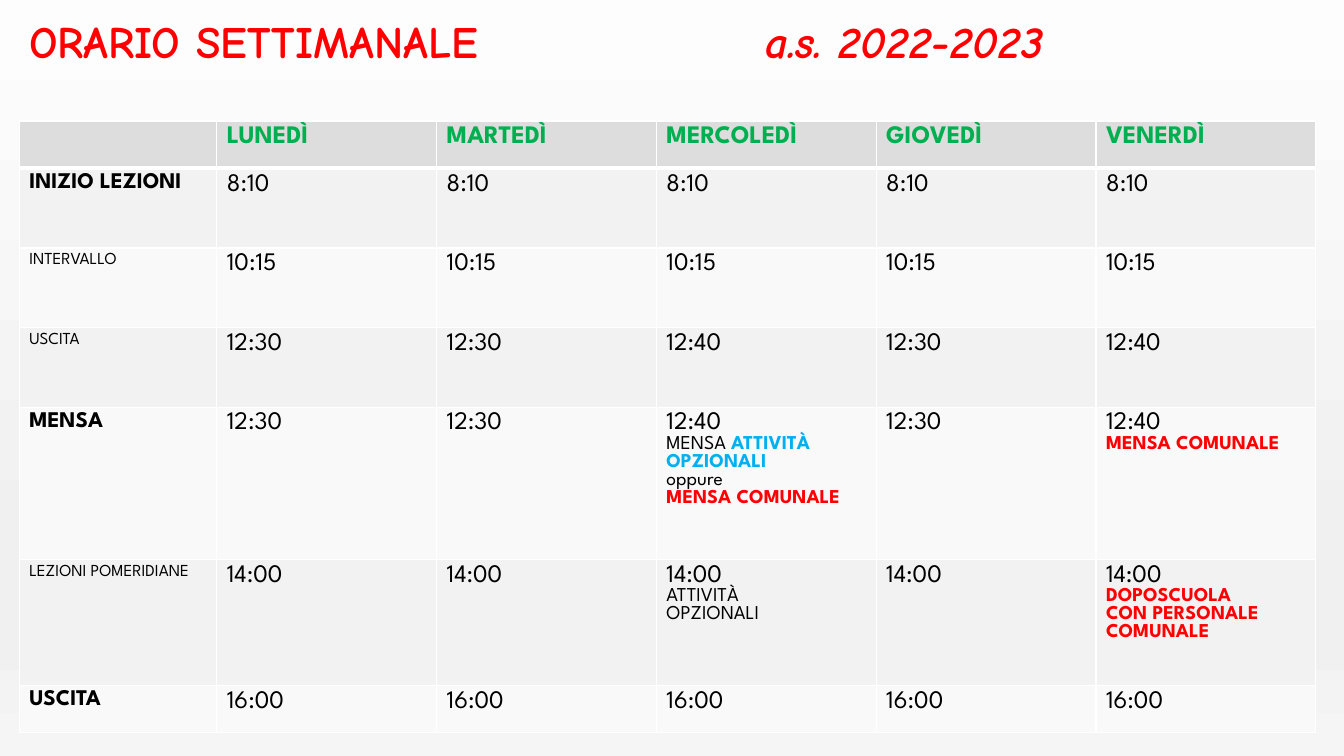
import pptx
import pptx.util
import pptx.dml.color
import pptx.enum.text
import pptx.oxml.ns
from lxml import etree
from pptx.util import Inches

RED, GREEN, BLUE, BLACK, WHITE = "FF0000", "00B050", "00B0F0", "000000", "FFFFFF"
HEADER_FILL, BAND_FILLS = "DDDDDD", ("F9F9F9", "F2F2F2")
BACKGROUND_STOPS = [(0, "FDFDFD"), (74, "F0F0F0"), (83, "F0F0F0"), (100, "F5F5F5")]

DAYS = ["LUNEDÌ", "MARTEDÌ", "MERCOLEDÌ", "GIOVEDÌ", "VENERDÌ"]
COLUMN_WIDTHS = [1.96] + [2.18] * len(DAYS)
HEADER_HEIGHT = 0.47
MAIN, MINOR = {"size": 16, "bold": True}, {"size": 12}
SCHEDULE = [
    ("INIZIO LEZIONI", MAIN, 0.79, ["8:10"] * 5),
    ("INTERVALLO", MINOR, 0.79, ["10:15"] * 5),
    ("USCITA", MINOR, 0.79, ["12:30", "12:30", "12:40", "12:30", "12:40"]),
    ("MENSA", MAIN, 1.51, ["12:30", "12:30", "12:40", "12:30", "12:40"]),
    ("LEZIONI POMERIDIANE", MINOR, 1.25, ["14:00"] * 5),
    ("USCITA", MAIN, 0.47, ["16:00"] * 5),
]
PLAIN_NOTE = {"size": 14}
RED_NOTE = {"size": 14, "color": RED, "bold": True}
BLUE_NOTE = {"size": 14, "color": BLUE, "bold": True}
NOTES = {
    ("MENSA", "MERCOLEDÌ"): [
        [("MENSA ", PLAIN_NOTE), ("ATTIVITÀ OPZIONALI", BLUE_NOTE)],
        [("oppure", PLAIN_NOTE)],
        [("MENSA COMUNALE", RED_NOTE)],
    ],
    ("MENSA", "VENERDÌ"): [[("MENSA COMUNALE", RED_NOTE)]],
    ("LEZIONI POMERIDIANE", "MERCOLEDÌ"): [
        [("ATTIVITÀ", PLAIN_NOTE)],
        [("OPZIONALI", PLAIN_NOTE)],
    ],
    ("LEZIONI POMERIDIANE", "VENERDÌ"): [
        [("DOPOSCUOLA", RED_NOTE)],
        [("CON PERSONALE COMUNALE", RED_NOTE)],
    ],
}


def rgb(color):
    """Turn a hex string into a colour."""
    return pptx.dml.color.RGBColor.from_string(color)


def add_xml(parent, tag, **attributes):
    """Append a DrawingML element to its parent."""
    return etree.SubElement(parent, pptx.oxml.ns.qn(tag), **attributes)


def write(paragraph, text, size=18, color=BLACK, bold=False, italic=False,
          font="League Spartan"):
    """Add a formatted run to a paragraph."""
    run = paragraph.add_run()
    run.text = text
    run.font.name = font
    run.font.size = pptx.util.Pt(size)
    run.font.bold = bold
    run.font.italic = italic
    run.font.color.rgb = rgb(color)


def paint_background(slide):
    """Give the slide its vertical grey gradient."""
    fill = slide.background.fill
    fill.gradient()
    fill.gradient_angle = 270
    stops = slide.element.find(".//" + pptx.oxml.ns.qn("a:gsLst"))
    for stop in list(stops):
        stops.remove(stop)
    for percent, color in BACKGROUND_STOPS:
        stop = add_xml(stops, "a:gs", pos=str(percent * 1000))
        add_xml(stop, "a:srgbClr", val=color)


def add_title(slide):
    """Fill the title, with the school year set at a tab stop."""
    title = slide.shapes.title
    title.left, title.top = Inches(0.19), Inches(0.09)
    title.width, title.height = Inches(12.68), Inches(0.64)
    frame = title.text_frame
    frame.word_wrap = True
    frame.auto_size = pptx.enum.text.MSO_AUTO_SIZE.NONE
    frame.vertical_anchor = pptx.enum.text.MSO_ANCHOR.TOP
    heading = frame.paragraphs[0]
    heading.alignment = pptx.enum.text.PP_ALIGN.LEFT
    tabs = add_xml(heading._p.get_or_add_pPr(), "a:tabLst")
    add_xml(tabs, "a:tab", pos=str(Inches(7.3)), algn="l")
    style = {"size": 32, "color": RED, "bold": True, "font": "Comic Neue"}
    write(heading, "ORARIO SETTIMANALE\t", **style)
    write(heading, "a.s. 2022-2023", italic=True, **style)


def format_cell(cell, fill, top=1, bottom=1):
    """Set the white borders and the fill of a cell."""
    properties = cell._tc.get_or_add_tcPr()
    for side, width in (("L", 1), ("R", 1), ("T", top), ("B", bottom)):
        line = add_xml(properties, "a:ln" + side, w=str(pptx.util.Pt(width)))
        add_xml(add_xml(line, "a:solidFill"), "a:srgbClr", val=WHITE)
    cell.fill.solid()
    cell.fill.fore_color.rgb = rgb(fill)


def fill_time(cell, time, notes):
    """Write a time and the notes below it."""
    frame = cell.text_frame
    write(frame.paragraphs[0], time)
    for note in notes:
        paragraph = frame.add_paragraph()
        for text, style in note:
            write(paragraph, text, **style)


def add_timetable(slide):
    """Build the weekly timetable."""
    heights = [HEADER_HEIGHT] + [height for _, _, height, _ in SCHEDULE]
    timetable = slide.shapes.add_table(
        len(heights), len(COLUMN_WIDTHS), Inches(0.19), Inches(1.2),
        Inches(sum(COLUMN_WIDTHS)), Inches(sum(heights))).table
    for column, width in zip(timetable.columns, COLUMN_WIDTHS):
        column.width = Inches(width)
    for row, height in zip(timetable.rows, heights):
        row.height = Inches(height)
    for cell in timetable.rows[0].cells:
        format_cell(cell, HEADER_FILL, bottom=3)
    for column, day in enumerate(DAYS, 1):
        write(timetable.cell(0, column).text_frame.paragraphs[0], day,
              color=GREEN, bold=True)
    for row, (label, style, _, times) in enumerate(SCHEDULE, 1):
        for cell in timetable.rows[row].cells:
            format_cell(cell, BAND_FILLS[row % 2], top=3 if row == 1 else 1)
        write(timetable.cell(row, 0).text_frame.paragraphs[0], label, **style)
        for column, (day, time) in enumerate(zip(DAYS, times), 1):
            fill_time(timetable.cell(row, column), time, NOTES.get((label, day), []))


def main():
    """Build and save the timetable slide."""
    presentation = pptx.Presentation()
    presentation.slide_width = Inches(13.33)
    presentation.slide_height = Inches(7.5)
    slide = presentation.slides.add_slide(presentation.slide_layouts[5])
    paint_background(slide)
    add_title(slide)
    add_timetable(slide)
    presentation.save("out.pptx")


if __name__ == "__main__":
    main()
